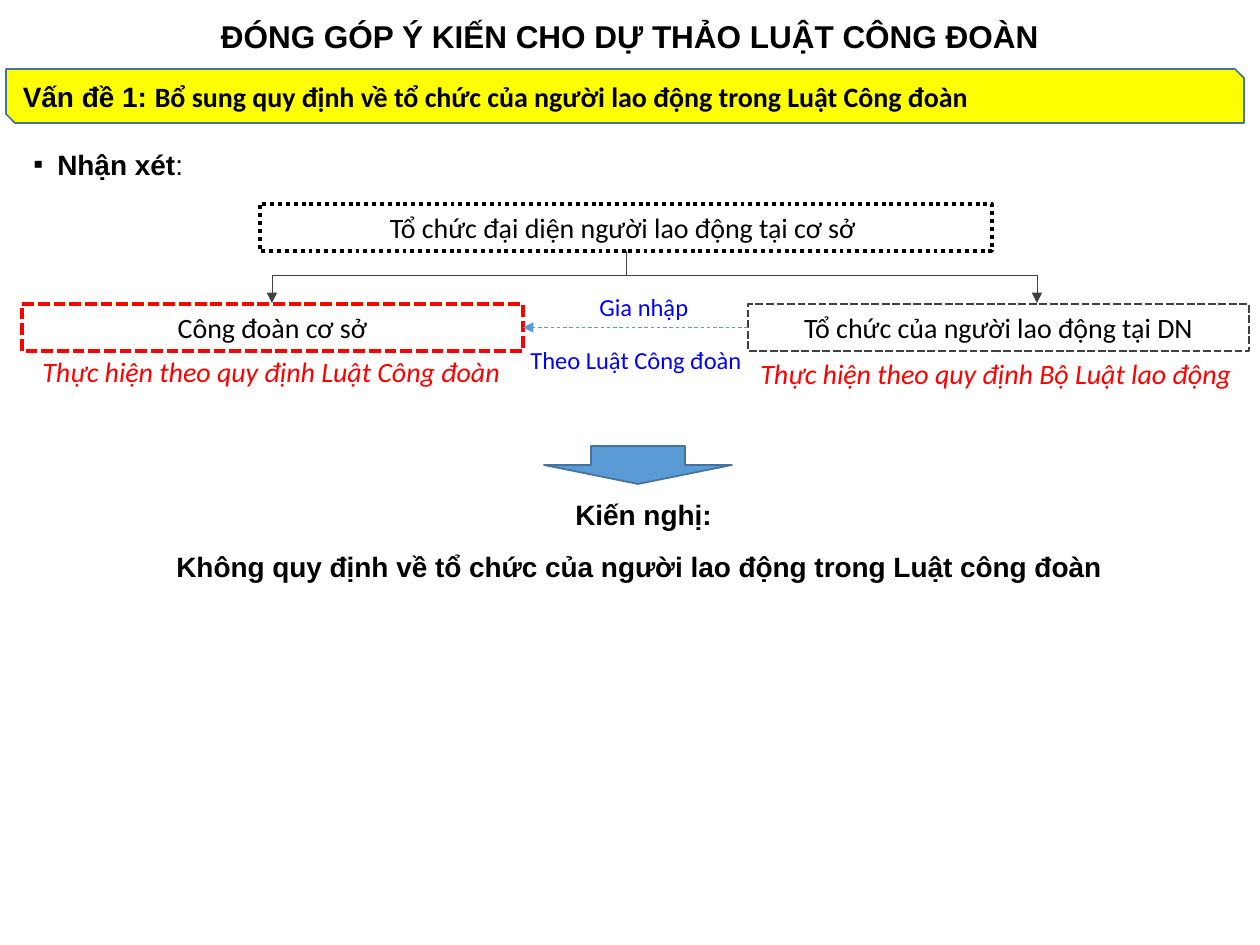
from lxml.etree import SubElement
from pptx import Presentation
from pptx.dml.color import RGBColor
from pptx.enum.dml import MSO_LINE as Dash
from pptx.enum.shapes import MSO_CONNECTOR as Connector, MSO_SHAPE as Shape
from pptx.enum.text import MSO_ANCHOR as Anchor, PP_ALIGN as Align
from pptx.oxml.ns import qn
from pptx.util import Pt

PX = 914400 / 126
BLACK, RED, BLUE, GRAY = "000000", "FF0000", "0000FF", "404040"
ACCENT, ACCENT_EDGE, YELLOW = "5B9BD5", "43739E", "FFFF00"
BOLD = dict(font="Arial", bold=True)
ITALIC = dict(color=RED, italic=True)
SMALL = dict(color=BLUE, size=14)

BANNER = [
    ("Vấn đề 1: ", BOLD),
    ("Bổ sung quy định về tổ chức của người lao động trong Luật Công đoàn", dict(bold=True)),
]
REMARK = [("Nhận xét", BOLD), (":", dict(font="Arial"))]
BOX_HEIGHT = 47
BOXES = [
    ("Tổ chức đại diện người lao động tại cơ sở ", (260, 204, 732), BLACK, 2.25, Dash.ROUND_DOT),
    ("Công đoàn cơ sở", (22, 304, 501), RED, 2.25, Dash.SQUARE_DOT),
    ("Tổ chức của người lao động tại DN", (748, 304, 501), GRAY, 1.5, Dash.SQUARE_DOT),
]
LABELS = [
    ("ĐÓNG GÓP Ý KIẾN CHO DỰ THẢO LUẬT CÔNG ĐOÀN", (204, 11, 852, 50), dict(BOLD, size=18), Align.CENTER, False),
    ("Thực hiện theo quy định Luật Công đoàn", (30, 348, 491, 47), ITALIC, Align.LEFT, False),
    ("Thực hiện theo quy định Bộ Luật lao động", (748, 350, 503, 47), ITALIC, Align.LEFT, False),
    ("Gia nhập", (587, 286, 121, 43), SMALL, Align.LEFT, False),
    ("Theo Luật Công đoàn", (518, 339, 239, 43), SMALL, Align.LEFT, False),
    ("Kiến nghị:", (563, 491, 164, 47), BOLD, Align.LEFT, False),
    ("Không quy định về tổ chức của người lao động trong Luật công đoàn", (164, 543, 960, 47), BOLD, Align.LEFT, True),
]
TRUNK_X, BRANCH_Y, BRANCH_XS = 626, 275, (272, 1037)


def emu(*lengths):
    return [round(length * PX) for length in lengths]


def rgb(value):
    return RGBColor.from_string(value)


def style_line(line, color, width, dash=None):
    line.color.rgb = rgb(color)
    line.width = Pt(width)
    if dash:
        line.dash_style = dash


def add_run(paragraph, text, font="Calibri", size=16, color=BLACK, bold=False, italic=False):
    run = paragraph.add_run()
    run.text = text
    run.font.name = font
    run.font.size = Pt(size)
    run.font.color.rgb = rgb(color)
    run.font.bold = bold
    run.font.italic = italic


def write(shape, runs, align=Align.LEFT, anchor=Anchor.TOP, wrap=True):
    frame = shape.text_frame
    frame.word_wrap = wrap
    frame.vertical_anchor = anchor
    paragraph = frame.paragraphs[0]
    paragraph.alignment = align
    for text, style in runs:
        add_run(paragraph, text, **style)
    return paragraph


def add_shape(slide, kind, bounds, edge, width, fill=None, dash=None):
    shape = slide.shapes.add_shape(kind, *emu(*bounds))
    shape.shadow.inherit = False
    if fill:
        shape.fill.solid()
        shape.fill.fore_color.rgb = rgb(fill)
    else:
        shape.fill.background()
    style_line(shape.line, edge, width, dash)
    return shape


def add_line(slide, points, color=GRAY, dash=None, arrow=False):
    connector = slide.shapes.add_connector(Connector.STRAIGHT, *emu(*points))
    style_line(connector.line, color, 0.5, dash)
    properties = connector._element.spPr
    if arrow:
        SubElement(properties.find(qn("a:ln")), qn("a:tailEnd"), type="triangle")
    SubElement(properties, qn("a:effectLst"))


def add_bullet(paragraph, character, indent):
    properties = paragraph._p.get_or_add_pPr()
    [distance] = emu(indent)
    properties.set("marL", str(distance))
    properties.set("indent", str(-distance))
    SubElement(properties, qn("a:buFont"), typeface="Arial")
    SubElement(properties, qn("a:buChar"), char=character)


def main():
    presentation = Presentation()
    presentation.slide_width, presentation.slide_height = emu(1260, 945)
    slide = presentation.slides.add_slide(presentation.slide_layouts[6])

    banner = add_shape(slide, Shape.SNIP_2_DIAG_RECTANGLE, (6, 69, 1238, 54), ACCENT_EDGE, 1, YELLOW)
    write(banner, BANNER, anchor=Anchor.MIDDLE)
    remark = slide.shapes.add_textbox(*emu(21, 141, 1222, 47))
    add_bullet(write(remark, REMARK), "▪", 24)

    for text, bounds, edge, width, dash in BOXES:
        box = add_shape(slide, Shape.RECTANGLE, (*bounds, BOX_HEIGHT), edge, width, dash=dash)
        write(box, [(text, {})], Align.CENTER)

    (_, (_, top, _), *_), (_, (left, row, width), *_), (_, (right, *_), *_) = BOXES
    add_line(slide, (TRUNK_X, top + BOX_HEIGHT, TRUNK_X, BRANCH_Y))
    add_line(slide, (BRANCH_XS[0], BRANCH_Y, BRANCH_XS[1], BRANCH_Y))
    for x in BRANCH_XS:
        add_line(slide, (x, BRANCH_Y, x, row - 1), arrow=True)
    middle = row + BOX_HEIGHT / 2
    add_line(slide, (right, middle, left + width, middle), ACCENT, Dash.DASH, arrow=True)

    add_shape(slide, Shape.DOWN_ARROW, (544, 446, 188, 38), ACCENT_EDGE, 1, ACCENT)
    for text, bounds, style, align, wrap in LABELS:
        label = slide.shapes.add_textbox(*emu(*bounds))
        write(label, [(text, style)], align, wrap=wrap)

    presentation.save("out.pptx")


if __name__ == "__main__":
    main()
